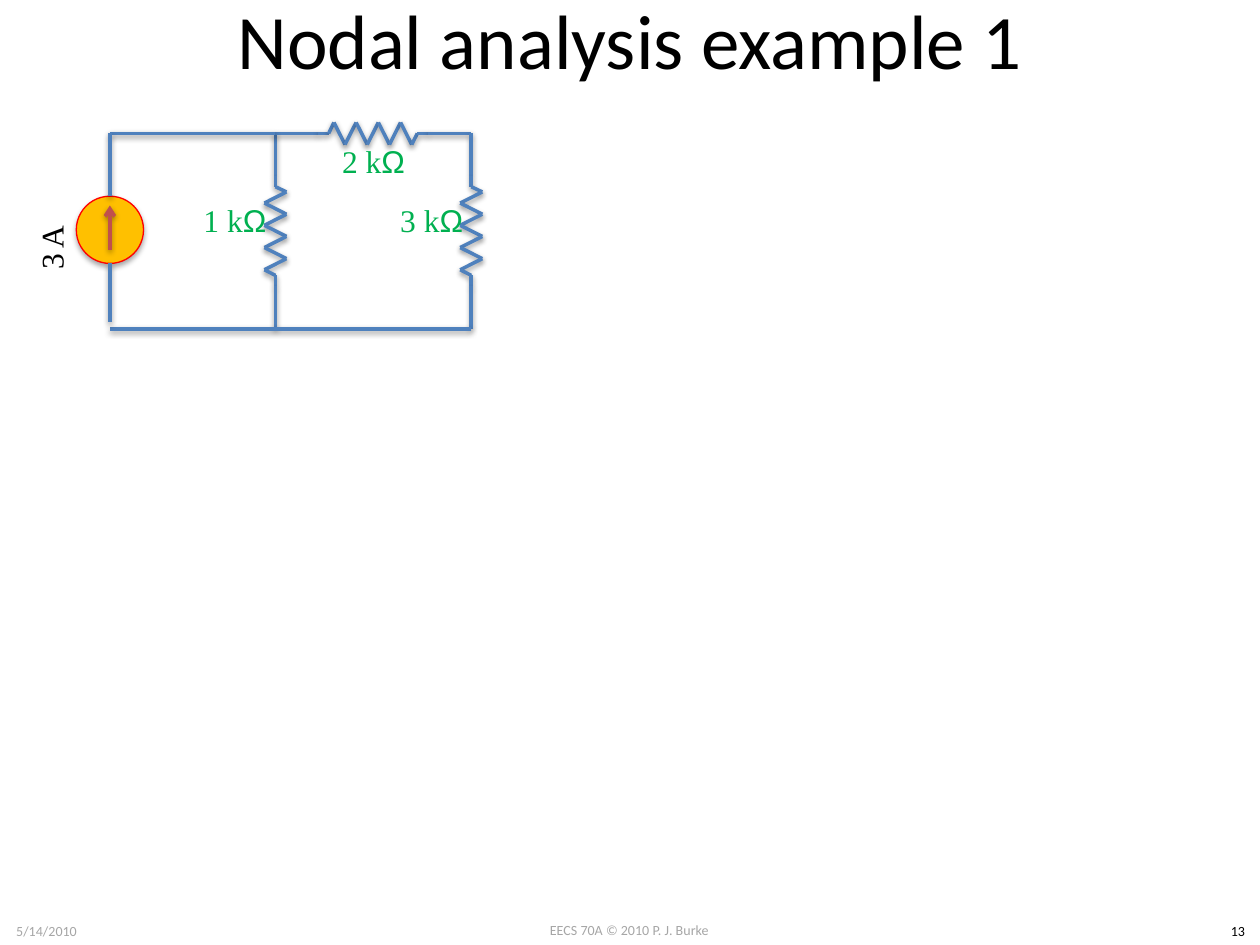
import pptx
import pptx.util
import pptx.oxml
import pptx.oxml.ns
import pptx.dml.color
import pptx.enum.shapes
import pptx.enum.text

Pt = pptx.util.Pt

COLORS = {"black": "000000", "footer": "A6A6A6", "value": "00B050", "wire": "4F81BD",
          "source": "FFC000", "rim": "FF0000", "arrow": "C0504D"}

LEFT, MIDDLE, RIGHT = 62.8, 157.4, 269.3
TOP, BOTTOM = 76.3, 187.9
SOURCE_TOP, SOURCE_SIZE = 112.1, 38.4
TEETH, TOOTH_START, TOOTH_STEP, TOOTH_HEIGHT = 8, 33.4, 6.35, 6.3
LEAD_IN, LEAD_OUT, RESISTOR_LENGTH = (0, 24.2, 30.4), (81.1, 87.3), 111.6

FOOTERS = [
    ("EECS 70A © 2010 P. J. Burke", (275.8, 522.8, 167.8, 17), "footer"),
    ("5/14/2010", (0, 523.4, 53.3, 17), "footer"),
    ("13", (694.8, 523.4, 25.2, 17), "black"),
]
TITLE = ("Nodal analysis example 1", (36, -12.2, 648, 68.4))
RESISTORS = [(MIDDLE, TOP, "vertical"), (MIDDLE, TOP, "horizontal"), (RIGHT, TOP, "vertical")]
RAILS = [((MIDDLE, TOP), (LEFT, TOP)), ((RIGHT, BOTTOM), (LEFT, BOTTOM))]
VALUE_SIZE = (85.7, 52.6)
VALUES = [("1 k", 91.4, 99.4), ("3 k", 203.8, 99.4), ("2 k", 170.6, 65.5)]
SOURCE_VALUE = ("3 A", -13.7, 115.2)


def rgb(name):
    return pptx.dml.color.RGBColor.from_string(COLORS[name])


def add_shadow(shape, distance, opacity):
    shape.element.spPr.append(pptx.oxml.parse_xml(
        f'<a:effectLst {pptx.oxml.ns.nsdecls("a")}>'
        f'<a:outerShdw blurRad="{Pt(3.15)}" dist="{Pt(distance)}" dir="5400000" rotWithShape="0">'
        f'<a:srgbClr val="{COLORS["black"]}"><a:alpha val="{opacity * 1000}"/></a:srgbClr>'
        '</a:outerShdw></a:effectLst>'))


def add_wire(shapes, start, end, color="wire"):
    wire = shapes.add_connector(pptx.enum.shapes.MSO_CONNECTOR.STRAIGHT,
                                *(Pt(value) for value in start + end))
    wire.line.color.rgb = rgb(color)
    wire.line.width = Pt(2)
    add_shadow(wire, 1.57, 38)
    return wire


def add_text(shapes, runs, box, size, color, grow=False):
    shape = shapes.add_textbox(*(Pt(value) for value in box))
    frame = shape.text_frame
    frame.word_wrap = not grow
    if grow:
        frame.auto_size = pptx.enum.text.MSO_AUTO_SIZE.SHAPE_TO_FIT_TEXT
    else:
        frame.vertical_anchor = pptx.enum.text.MSO_ANCHOR.MIDDLE
    paragraph = frame.paragraphs[0]
    paragraph.alignment = pptx.enum.text.PP_ALIGN.CENTER
    paragraph.font.size = Pt(size)
    paragraph.font.color.rgb = rgb(color)
    for text, font_name in runs:
        run = paragraph.add_run()
        run.text = text
        run.font.name = font_name
    return shape


def add_resistor(slide, x, y, direction):
    teeth = [(TOOTH_START + TOOTH_STEP * i, TOOTH_HEIGHT * (-1) ** i) for i in range(TEETH)]
    profile = [(along, 0) for along in LEAD_IN] + teeth
    profile += [(along, 0) for along in LEAD_OUT + (RESISTOR_LENGTH,)]
    if direction == "vertical":
        points = [(x + side, y + along) for along, side in profile]
    else:
        points = [(x + along, y - side) for along, side in profile]
    group = slide.shapes.add_group_shape()
    for start, end in zip(points, points[1:]):
        add_wire(group.shapes, start, end)


def add_current_source(slide):
    shapes = slide.shapes.add_group_shape().shapes
    circle = shapes.add_shape(pptx.enum.shapes.MSO_SHAPE.OVAL, Pt(LEFT - SOURCE_SIZE / 2),
                              Pt(SOURCE_TOP), Pt(SOURCE_SIZE), Pt(SOURCE_SIZE))
    circle.fill.solid()
    circle.fill.fore_color.rgb = rgb("source")
    circle.line.color.rgb = rgb("rim")
    circle.line.width = Pt(0.75)
    add_shadow(circle, 1.81, 35)
    arrow = add_wire(shapes, (LEFT, 142.6), (LEFT, 117.4), "arrow")
    arrow.line._get_or_add_ln().append(pptx.oxml.parse_xml(
        f'<a:tailEnd {pptx.oxml.ns.nsdecls("a")} type="arrow"/>'))
    add_wire(shapes, (LEFT, SOURCE_TOP), (LEFT, TOP))
    add_wire(shapes, (LEFT, SOURCE_TOP + SOURCE_SIZE), (LEFT, 184.3))


def main():
    presentation = pptx.Presentation()
    presentation.slide_width, presentation.slide_height = Pt(720), Pt(540)
    slide = presentation.slides.add_slide(presentation.slide_layouts[6])

    for text, box, color in FOOTERS:
        add_text(slide.shapes, [(text, "Calibri")], box, 8, color, grow=True)
    title, title_box = TITLE
    add_text(slide.shapes, [(title, "Calibri")], title_box, 44, "black")

    for x, y, direction in RESISTORS:
        add_resistor(slide, x, y, direction)
    for start, end in RAILS:
        add_wire(slide.shapes, start, end)

    for text, x, y in VALUES:
        runs = [(text, "Times New Roman"), ("Ω", "Arial")]
        add_text(slide.shapes, runs, (x, y) + VALUE_SIZE, 18, "value")
    text, x, y = SOURCE_VALUE
    label = add_text(slide.shapes, [(text, "Times New Roman")], (x, y) + VALUE_SIZE, 18, "black")
    label.rotation = 270
    add_current_source(slide)

    presentation.save("out.pptx")


if __name__ == "__main__":
    main()
